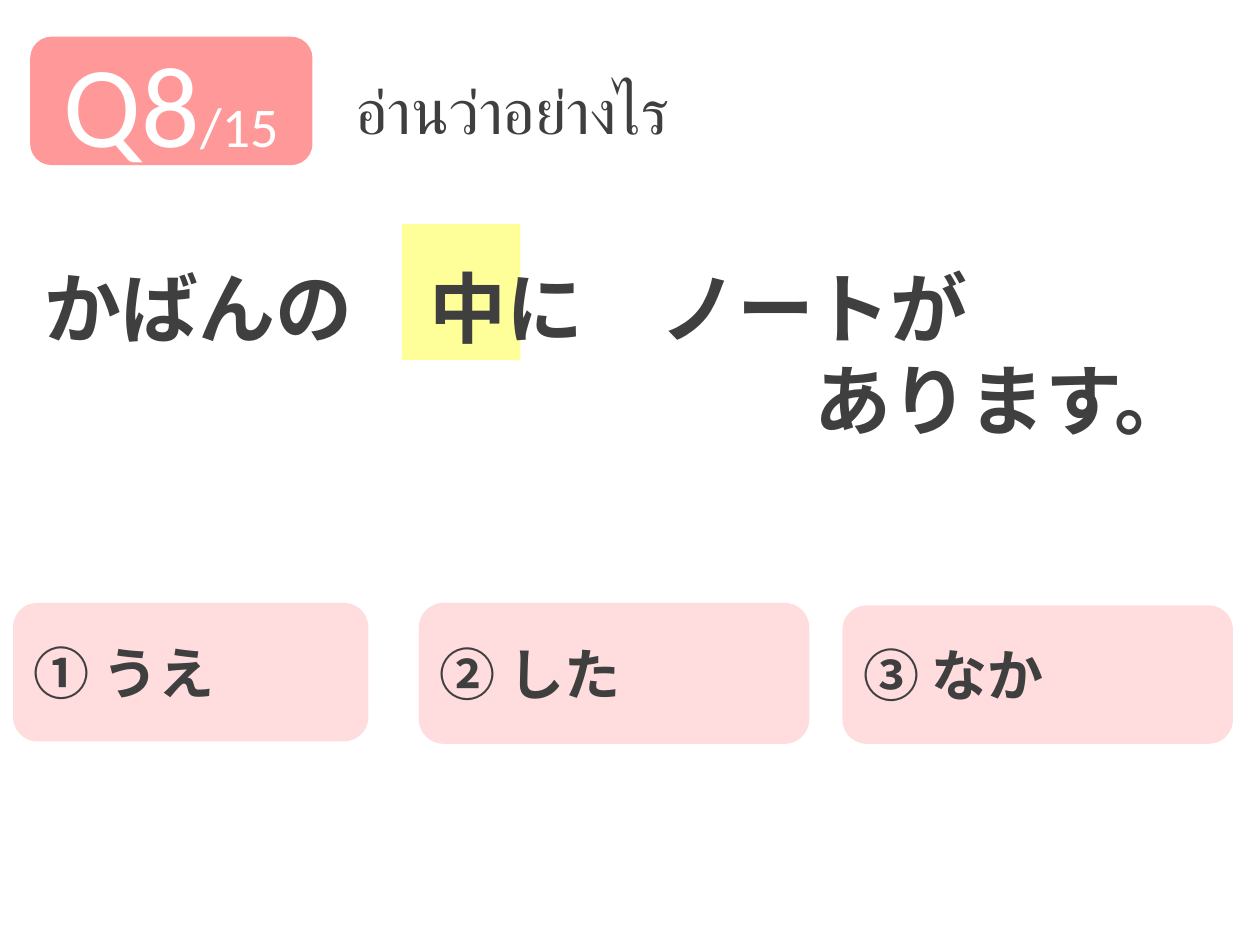
import pptx
import pptx.util
import pptx.dml.color
import pptx.enum.shapes
import pptx.enum.text

Cm = pptx.util.Cm
Pt = pptx.util.Pt
RGB = pptx.dml.color.RGBColor
SHAPE = pptx.enum.shapes.MSO_SHAPE
ALIGN = pptx.enum.text.PP_ALIGN
ANCHOR = pptx.enum.text.MSO_ANCHOR
FIT = pptx.enum.text.MSO_AUTO_SIZE

WHITE = RGB(0xFF, 0xFF, 0xFF)
YELLOW = RGB(0xFF, 0xFF, 0x99)
CORAL = RGB(0xFF, 0x99, 0x99)
PINK = RGB(0xFF, 0xDD, 0xDE)
GRAY = RGB(0x3F, 0x3F, 0x3F)


def write(para, text, size, font="Lato", color=GRAY, bold=False,
          align=ALIGN.LEFT, indent=0):
    """Add one formatted run to a paragraph."""
    para.alignment = align
    if indent:
        para._p.get_or_add_pPr().set("marL", str(indent))
    run = para.add_run()
    run.text = text
    run.font.size = Pt(size)
    run.font.name = font
    run.font.bold = bold
    run.font.color.rgb = color


def add_box(slide, kind, place, fill, edge=None):
    """Add a filled shape and return its first paragraph."""
    box = slide.shapes.add_shape(kind, *map(Cm, place))
    box.shadow.inherit = False
    box.fill.solid()
    box.fill.fore_color.rgb = fill
    if edge is None:
        box.line.fill.background()
    else:
        box.line.color.rgb = edge
        box.line.width = Pt(2)
    box.text_frame.word_wrap = True
    box.text_frame.vertical_anchor = ANCHOR.MIDDLE
    return box.text_frame.paragraphs[0]


def add_label(slide, place):
    """Add a wrapping text box and return its frame."""
    frame = slide.shapes.add_textbox(*map(Cm, place)).text_frame
    frame.word_wrap = True
    frame.auto_size = FIT.SHAPE_TO_FIT_TEXT
    return frame


def main():
    deck = pptx.Presentation()
    deck.slide_width, deck.slide_height = Cm(25.4), Cm(19.05)
    slide = deck.slides.add_slide(deck.slide_layouts[6])

    # Marker behind the tested word
    add_box(slide, SHAPE.RECTANGLE, (8.1, 4.52, 2.39, 2.74), YELLOW)

    # Question number
    badge = add_box(slide, SHAPE.ROUNDED_RECTANGLE,
                    (0.61, 0.74, 5.69, 2.59), CORAL)
    for text, size in (("Q8", 66), ("/15", 32)):
        write(badge, text, size, font="Calibri", color=WHITE,
              align=ALIGN.CENTER)

    # Answers
    answers = (
        ("③ なか", (17.02, 12.24, 7.8, 2.72)),
        ("① うえ", (0.3, 12.19, 7.09, 2.72)),
        ("② した", (8.48, 12.19, 7.8, 2.77)),
    )
    for text, place in answers:
        para = add_box(slide, SHAPE.ROUNDED_RECTANGLE, place, PINK, edge=PINK)
        write(para, text, 32, bold=True)

    # Sentence, its second line set in by ten characters
    size = 44
    frame = add_label(slide, (0.64, 5.13, 24.05, 4.01))
    write(frame.paragraphs[0], "かばんの　中に　ノートが", size, bold=True)
    write(frame.add_paragraph(), "あります。", size, bold=True,
          indent=10 * Pt(size))

    # Prompt
    frame = add_label(slide, (6.91, 1.32, 17.4, 1.8))
    write(frame.paragraphs[0], "อ่านว่าอย่างไร", 36)

    deck.save("out.pptx")


if __name__ == "__main__":
    main()
